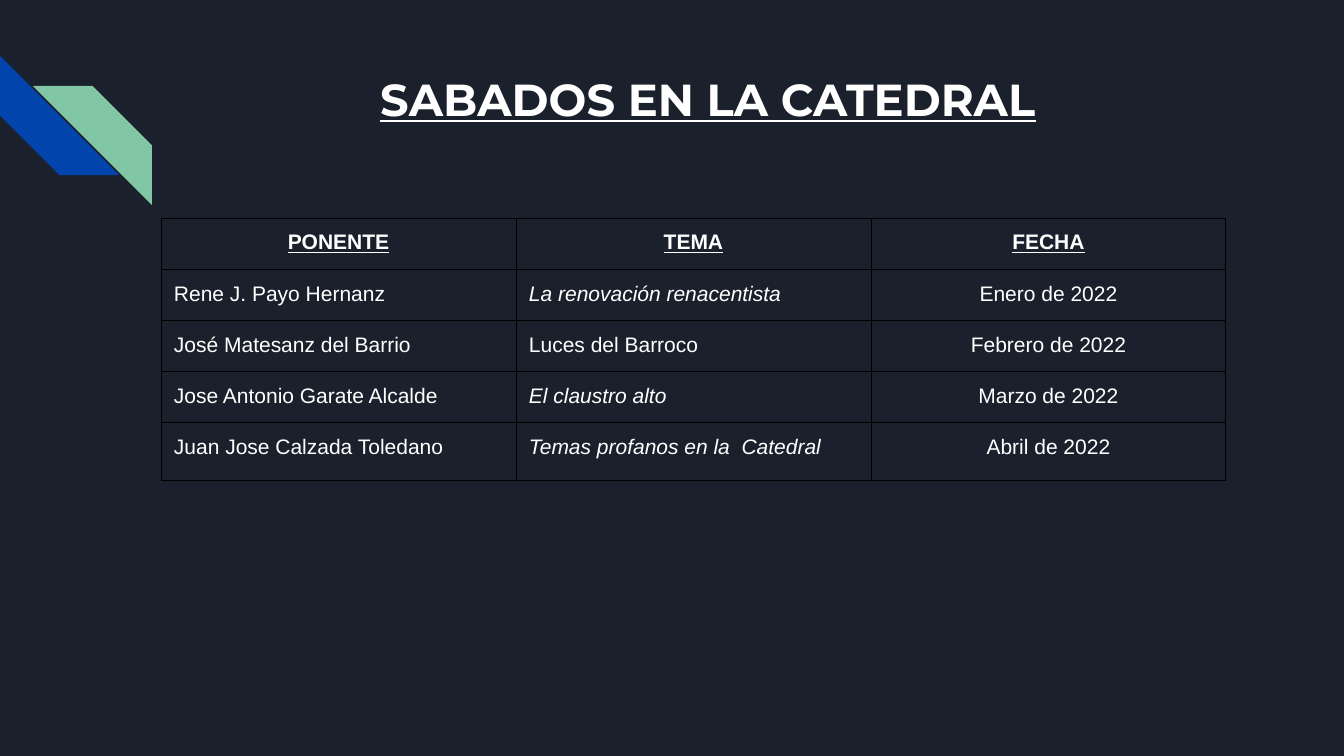
from lxml import etree
from pptx import Presentation
from pptx.dml.color import RGBColor
from pptx.enum.shapes import MSO_SHAPE
from pptx.enum.text import MSO_ANCHOR, PP_ALIGN
from pptx.oxml.ns import qn
from pptx.util import Pt

PX = 12192000 / 1344
NIGHT = RGBColor(0x1B, 0x21, 0x2C)
BLUE = RGBColor(0x01, 0x45, 0xAC)
GREEN = RGBColor(0x82, 0xC7, 0xA5)
WHITE = RGBColor(0xFF, 0xFF, 0xFF)
BLACK = RGBColor(0, 0, 0)
LEFT, CENTER = PP_ALIGN.LEFT, PP_ALIGN.CENTER
TOP = MSO_ANCHOR.TOP
STRIPE = MSO_SHAPE.DIAGONAL_STRIPE
PAD = 13


def px(*nums):
    return [round(n * PX) for n in nums]


def write(frame, text, align, style):
    para = frame.paragraphs[0]
    para.alignment = align
    run = para.add_run()
    run.text = text
    run.font.color.rgb = WHITE
    for key, value in style.items():
        setattr(run.font, key, value)


prs = Presentation()
prs.slide_width, prs.slide_height = px(1344, 756)
slide = prs.slides.add_slide(prs.slide_layouts[6])
slide.background.fill.solid()
slide.background.fill.fore_color.rgb = NIGHT

# Corner stripes
for left, top, turn, color in [(0, 56, 270, BLUE), (33, 86, 90, GREEN)]:
    stripe = slide.shapes.add_shape(STRIPE, *px(left, top, 119, 119))
    stripe.rotation = turn
    stripe.adjustments[0] = 0.5
    stripe.shadow.inherit = False
    stripe.fill.solid()
    stripe.fill.fore_color.rgb = color
    stripe.line.fill.background()

# Title
title = slide.shapes.add_textbox(*px(191, 59, 1034, 76)).text_frame
title.word_wrap = True
title.vertical_anchor = TOP
sides = ("margin_left", "margin_right", "margin_top", "margin_bottom")
for side in sides:
    setattr(title, side, px(PAD)[0])
write(title, "SABADOS EN LA CATEDRAL", CENTER,
      {"name": "Montserrat", "size": Pt(32), "bold": True, "underline": True})

# Table of talks
TALKS = [
    ("PONENTE", "TEMA", "FECHA"),
    ("Rene J. Payo Hernanz", "La renovación renacentista", "Enero de 2022"),
    ("José Matesanz del Barrio", "Luces del Barroco", "Febrero de 2022"),
    ("Jose Antonio Garate Alcalde", "El claustro alto", "Marzo de 2022"),
    ("Juan Jose Calzada Toledano", "Temas profanos en la  Catedral",
     "Abril de 2022"),
]
PLAIN = "Luces del Barroco"
HEIGHTS = [51, 50, 51, 51, 58]
table = slide.shapes.add_table(
    len(TALKS), 3, *px(161, 218, 1065, sum(HEIGHTS))).table
table.first_row = table.horz_banding = False
for col in table.columns:
    col.width = px(355)[0]
for r, (talk, height) in enumerate(zip(TALKS, HEIGHTS)):
    table.rows[r].height = px(height)[0]
    head = r == 0
    for c, text in enumerate(talk):
        cell = table.cell(r, c)
        cell.vertical_anchor = TOP
        for side in sides:
            setattr(cell, side, px(PAD)[0])
        props = cell._tc.get_or_add_tcPr()
        for edge in ("a:lnL", "a:lnR", "a:lnT", "a:lnB"):
            line = etree.SubElement(props, qn(edge), w=str(Pt(0.75)))
            fill = etree.SubElement(line, qn("a:solidFill"))
            etree.SubElement(fill, qn("a:srgbClr"), val=str(BLACK))
        cell.fill.background()
        write(cell.text_frame, text, CENTER if head or c == 2 else LEFT,
              {"name": "Arial", "size": Pt(15), "bold": head,
               "underline": head,
               "italic": c == 1 and not head and text != PLAIN})

prs.save("out.pptx")
